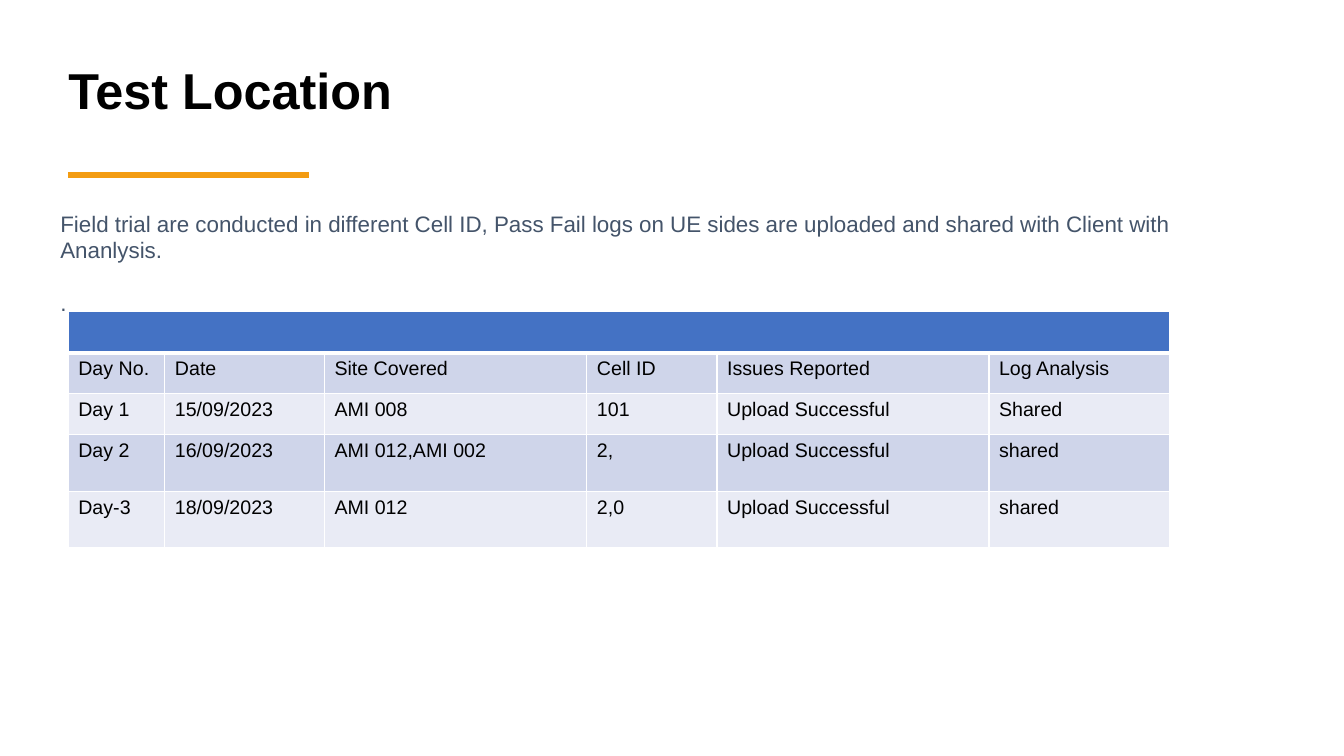
from dataclasses import dataclass

from lxml.etree import SubElement
from pptx import Presentation
from pptx.dml.color import RGBColor
from pptx.enum.shapes import MSO_CONNECTOR
from pptx.enum.text import MSO_ANCHOR, MSO_AUTO_SIZE, PP_ALIGN
from pptx.oxml.ns import qn
from pptx.slide import Slide
from pptx.table import _Cell
from pptx.text.text import _Paragraph
from pptx.util import Emu, Pt

EMU_PER_PX = 9525


@dataclass(frozen=True)
class Theme:
    font: str = "Arial"
    ink: str = "000000"
    muted: str = "44546A"
    accent: str = "F39C12"
    banner: str = "4472C4"
    bands: tuple[str, str] = ("CFD5EA", "E9EBF5")
    border: str = "FFFFFF"
    title_size: int = 36
    intro_size: int = 16
    table_size: int = 14


@dataclass(frozen=True)
class TestDay:
    day: str
    date: str
    site: str
    cell_id: str
    issues: str
    log: str
    height: int

    def texts(self) -> tuple[str, ...]:
        return self.day, self.date, self.site, self.cell_id, self.issues, self.log


THEME = Theme()
BANNER_HEIGHT = 39
COLUMN_WIDTHS = (92, 152, 250, 124, 259, 172)
TEST_DAYS = (
    TestDay("Day No.", "Date", "Site Covered", "Cell ID", "Issues Reported", "Log Analysis", 39),
    TestDay("Day 1", "15/09/2023", "AMI 008", "101", "Upload Successful", "Shared", 39),
    TestDay("Day 2", "16/09/2023", "AMI 012,AMI 002", "2,", "Upload Successful", "shared", 54),
    TestDay("Day-3", "18/09/2023", "AMI 012", "2,0", "Upload Successful", "shared", 54),
)


def px(length: int) -> Emu:
    return Emu(length * EMU_PER_PX)


def add_run(paragraph: _Paragraph, text: str, size: int, color: str, bold: bool = False) -> None:
    run = paragraph.add_run()
    run.text = text
    run.font.name = THEME.font
    run.font.size = Pt(size)
    run.font.bold = bold
    run.font.color.rgb = RGBColor.from_string(color)


def add_title(slide: Slide) -> None:
    title = slide.shapes.title
    title.left, title.top, title.width, title.height = px(65), px(29), px(1149), px(119)
    frame = title.text_frame
    frame.auto_size = MSO_AUTO_SIZE.NONE
    frame.vertical_anchor = MSO_ANCHOR.MIDDLE
    frame.margin_left = frame.margin_right = 0
    heading = frame.paragraphs[0]
    heading.alignment = PP_ALIGN.LEFT
    heading.line_spacing = 0.9
    add_run(heading, "Test Location", THEME.title_size, THEME.ink, bold=True)


def add_accent_rule(slide: Slide) -> None:
    rule = slide.shapes.add_connector(MSO_CONNECTOR.STRAIGHT, px(65), px(167), px(294), px(167))
    rule.line.color.rgb = RGBColor.from_string(THEME.accent)
    rule.line.width = Pt(4.5)
    SubElement(rule._element.spPr, qn("a:effectLst"))


def add_intro(slide: Slide) -> None:
    intro = slide.shapes.add_textbox(px(48), px(195), px(1106), px(113)).text_frame
    intro.word_wrap = True
    add_run(
        intro.paragraphs[0],
        "Field trial are conducted in different Cell ID, Pass Fail logs on UE sides "
        "are uploaded and shared with Client with Ananlysis.",
        THEME.intro_size,
        THEME.muted,
    )
    closing = intro.add_paragraph()
    closing.space_before = Pt(18.4)
    add_run(closing, ".", THEME.intro_size, THEME.muted)


def style_cell(cell: _Cell, fill: str, top: int = 1, bottom: int = 1) -> None:
    properties = cell._tc.get_or_add_tcPr()
    for side, width in (("L", 1), ("R", 1), ("T", top), ("B", bottom)):
        border = SubElement(properties, qn(f"a:ln{side}"), w=str(Pt(width)))
        border_fill = SubElement(border, qn("a:solidFill"))
        SubElement(border_fill, qn("a:srgbClr"), val=THEME.border)
    cell.fill.solid()
    cell.fill.fore_color.rgb = RGBColor.from_string(fill)


def add_test_table(slide: Slide) -> None:
    heights = (BANNER_HEIGHT, *(test_day.height for test_day in TEST_DAYS))
    table = slide.shapes.add_table(
        len(heights), len(COLUMN_WIDTHS), px(65), px(297), px(sum(COLUMN_WIDTHS)), px(sum(heights))
    ).table
    table.first_row = table.horz_banding = False
    for column, width in zip(table.columns, COLUMN_WIDTHS):
        column.width = px(width)
    for row, height in zip(table.rows, heights):
        row.height = px(height)

    # Banner across all columns
    for cell in table.rows[0].cells:
        style_cell(cell, THEME.banner, bottom=3)
    table.cell(0, 0).merge(table.cell(0, len(COLUMN_WIDTHS) - 1))

    # Column names and test days in alternating bands
    for index, test_day in enumerate(TEST_DAYS):
        for cell, text in zip(table.rows[index + 1].cells, test_day.texts()):
            style_cell(cell, THEME.bands[index % 2], top=3 if index == 0 else 1)
            add_run(cell.text_frame.paragraphs[0], text, THEME.table_size, THEME.ink)


def main() -> None:
    presentation = Presentation()
    presentation.slide_width, presentation.slide_height = px(1280), px(720)
    slide = presentation.slides.add_slide(presentation.slide_layouts.get_by_name("Title Only"))
    add_accent_rule(slide)
    add_title(slide)
    add_intro(slide)
    add_test_table(slide)
    presentation.save("out.pptx")


if __name__ == "__main__":
    main()
